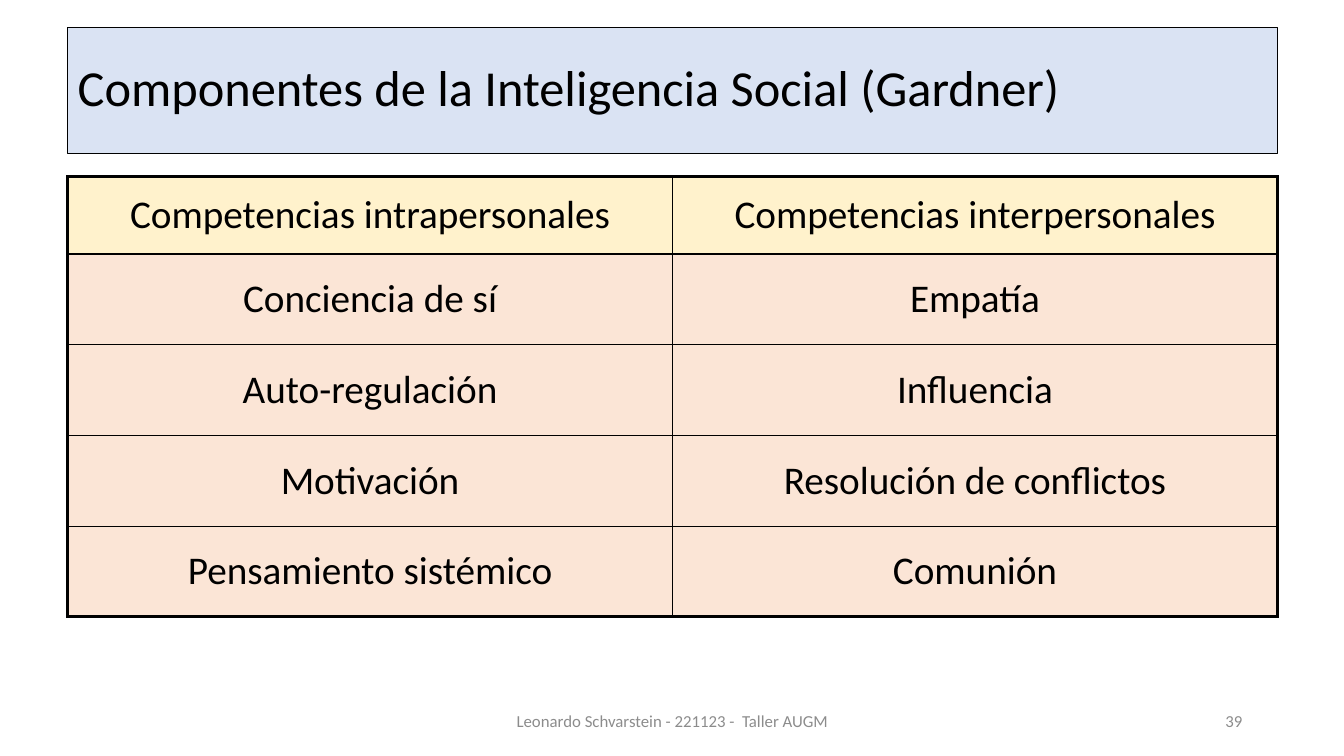
import dataclasses

import pptx
import pptx.dml.color
import pptx.enum.text
import pptx.oxml.ns
import pptx.util
from lxml import etree

Inches = pptx.util.Inches
Pt = pptx.util.Pt
RGBColor = pptx.dml.color.RGBColor
ALIGN = pptx.enum.text.PP_ALIGN
MIDDLE = pptx.enum.text.MSO_ANCHOR.MIDDLE

BLACK = RGBColor(0x00, 0x00, 0x00)
GRAY = RGBColor(0x8C, 0x8C, 0x8C)
BLUE = RGBColor(0xDA, 0xE3, 0xF3)
CREAM = RGBColor(0xFF, 0xF2, 0xCC)
PEACH = RGBColor(0xFB, 0xE5, 0xD6)

FONT = "Calibri"
LEFT, WIDTH = 0.67, 12
THICK, THIN = 2.25, 1
HEAD, ROW = 0.77, 0.9

SKILLS = [
    ("Competencias intrapersonales", "Competencias interpersonales"),
    ("Conciencia de sí", "Empatía"),
    ("Auto-regulación", "Influencia"),
    ("Motivación", "Resolución de conflictos"),
    ("Pensamiento sistémico", "Comunión"),
]


@dataclasses.dataclass
class Note:
    text: str
    left: float
    width: float
    align: ALIGN


NOTES = [
    Note("Leonardo Schvarstein - 221123 -  Taller AUGM", 4.42, 4.5, ALIGN.CENTER),
    Note("39", 9.42, 3, ALIGN.RIGHT),
]


def write(frame, text: str, size: float, color: RGBColor, align: ALIGN) -> None:
    frame.text = text
    frame.word_wrap = True
    frame.vertical_anchor = MIDDLE
    para = frame.paragraphs[0]
    para.alignment = align
    font = para.runs[0].font
    font.name, font.size, font.color.rgb = FONT, Pt(size), color


def edge(cell, side: str, width: float) -> None:
    qn = pptx.oxml.ns.qn
    props = cell._tc.get_or_add_tcPr()
    line = etree.SubElement(props, qn(f"a:ln{side}"), w=str(Pt(width)))
    fill = etree.SubElement(line, qn("a:solidFill"))
    etree.SubElement(fill, qn("a:srgbClr"), val=str(BLACK))


def add_title(slide) -> None:
    title = slide.shapes.title
    title.left, title.top = Inches(LEFT), Inches(0.27)
    title.width, title.height = Inches(WIDTH), Inches(1.25)
    title.fill.solid()
    title.fill.fore_color.rgb = BLUE
    title.line.color.rgb = BLACK
    title.line.width = Pt(0.75)
    text = "Componentes de la Inteligencia Social (Gardner)"
    write(title.text_frame, text, 36, BLACK, ALIGN.LEFT)
    title.text_frame.paragraphs[0].line_spacing = 0.9


def add_grid(slide) -> None:
    rows, cols = len(SKILLS), len(SKILLS[0])
    high = HEAD + ROW * (rows - 1)
    table = slide.shapes.add_table(
        rows, cols, Inches(LEFT), Inches(1.75), Inches(WIDTH), Inches(high)
    ).table
    table.first_row = table.horz_banding = False
    for col in table.columns:
        col.width = Inches(WIDTH / cols)
    for r, texts in enumerate(SKILLS):
        table.rows[r].height = Inches(ROW if r else HEAD)
        for c, text in enumerate(texts):
            cell = table.cell(r, c)
            write(cell.text_frame, text, 28, BLACK, ALIGN.CENTER)
            cell.vertical_anchor = MIDDLE
            # Thick lines run around the outside; they precede the fill
            outer = {"L": c == 0, "R": c == cols - 1, "T": r == 0, "B": r == rows - 1}
            for side, thick in outer.items():
                edge(cell, side, THICK if thick else THIN)
            cell.fill.solid()
            cell.fill.fore_color.rgb = PEACH if r else CREAM


def add_note(slide, note: Note) -> None:
    box = slide.shapes.add_textbox(
        Inches(note.left), Inches(6.95), Inches(note.width), Inches(0.4)
    )
    write(box.text_frame, note.text, 12, GRAY, note.align)


def main() -> None:
    deck = pptx.Presentation()
    deck.slide_width, deck.slide_height = Inches(13.33), Inches(7.5)
    slide = deck.slides.add_slide(deck.slide_layouts.get_by_name("Title Only"))

    # Title and table of skills
    add_title(slide)
    add_grid(slide)

    # Footer and page number
    for note in NOTES:
        add_note(slide, note)

    deck.save("out.pptx")


if __name__ == "__main__":
    main()
